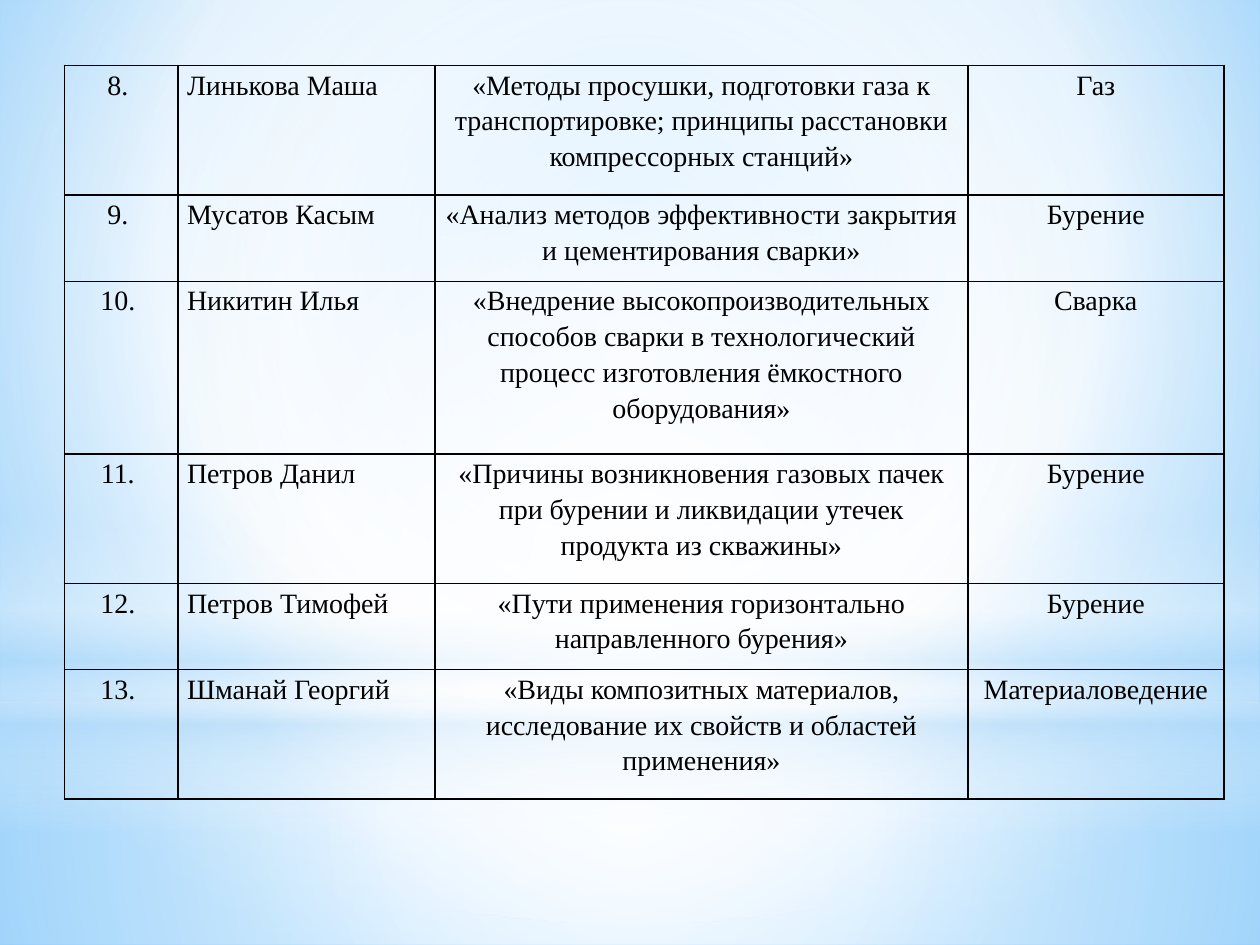
from lxml.etree import SubElement
from pptx import Presentation
from pptx.dml.color import RGBColor
from pptx.enum.shapes import MSO_SHAPE as SHAPE
from pptx.enum.text import PP_ALIGN as ALIGN
from pptx.oxml.ns import qn
from pptx.util import Cm, Pt

COLORS = {"white": "FFFFFF", "ice": "B4DCFA", "sky": "9ED5FF", "blue": "5BB9FF", "black": "000000"}
FONT = "Times New Roman"

FIRST_NUMBER = 8
TOPICS = [
    ("Линькова Маша", "«Методы просушки, подготовки газа к транспортировке; "
     "принципы расстановки компрессорных станций»", "Газ", 3),
    ("Мусатов Касым", "«Анализ методов эффективности закрытия и цементирования сварки»", "Бурение", 2),
    ("Никитин Илья", "«Внедрение высокопроизводительных способов сварки в технологический "
     "процесс изготовления ёмкостного оборудования»", "Сварка", 4),
    ("Петров Данил", "«Причины возникновения газовых пачек при бурении и ликвидации "
     "утечек продукта из скважины»", "Бурение", 3),
    ("Петров Тимофей", "«Пути применения горизонтально направленного бурения»", "Бурение", 2),
    ("Шманай Георгий", "«Виды композитных материалов, исследование их свойств "
     "и областей применения»", "Материаловедение", 3),
]
COLUMNS = [(2.29, ALIGN.CENTER), (5.18, ALIGN.LEFT), (10.74, ALIGN.CENTER), (5.16, ALIGN.CENTER)]
TABLE_LEFT, TABLE_TOP, LINE_HEIGHT = 1.3, 1.32, 0.87

WIDTH, HEIGHT, HORIZON = 25.4, 19.05, 14.17
CENTER = (50, 50, 50, 50)
BACKDROP = [(0, "sky", 100), (60, "white", 100), (100, "blue", 100)]
GLOWS = [
    (SHAPE.RECTANGLE, HORIZON, HEIGHT - HORIZON, CENTER,
     [(0, "white", 91), (37, "white", 76), (100, "ice", 79)]),
    (SHAPE.RECTANGLE, 0, HORIZON, CENTER,
     [(0, "white", 89), (48, "white", 62), (100, "ice", 79)]),
    (SHAPE.RECTANGLE, 10.46, 6.35, None,
     [(0, "white", 0), (29, "white", 30), (45, "ice", 40), (55, "white", 26),
      (65, "ice", 60), (100, "white", 0)]),
    (SHAPE.OVAL, 4.45, HORIZON, CENTER, [(0, "white", 100), (56, "white", 0)]),
]


def set_gradient(fill, element, stops, focus=None):
    """Fill with colour stops, around a focus rectangle or else downwards."""
    fill.gradient()
    grad = element.xpath(".//a:gradFill")[0]
    for child in list(grad):
        grad.remove(child)
    gs_list = SubElement(grad, qn("a:gsLst"))
    for pos, color, alpha in stops:
        gs = SubElement(gs_list, qn("a:gs"), pos=str(pos * 1000))
        clr = SubElement(gs, qn("a:srgbClr"), val=COLORS[color])
        if alpha < 100:
            SubElement(clr, qn("a:alpha"), val=str(alpha * 1000))
    if focus:
        circle = SubElement(grad, qn("a:path"), path="circle")
        sides = {side: str(value * 1000) for side, value in zip("ltrb", focus)}
        SubElement(circle, qn("a:fillToRect"), **sides)
    else:
        SubElement(grad, qn("a:lin"), ang="5400000", scaled="0")


def add_glow(s, kind, top, height, focus, stops):
    """Add one full-width translucent layer."""
    sp = s.shapes.add_shape(kind, 0, Cm(top), Cm(WIDTH), Cm(height))
    sp.shadow.inherit = False
    sp.line.fill.background()
    set_gradient(sp.fill, sp._element, stops, focus)


def write(cell, text, align=ALIGN.LEFT, size=16, color="black", spacing=1.15):
    """Put formatted text into a cell."""
    p = cell.text_frame.paragraphs[0]
    p.alignment = align
    p.line_spacing = spacing
    r = p.add_run()
    r.text = text
    r.font.name = FONT
    r.font.size = Pt(size)
    r.font.color.rgb = RGBColor.from_string(COLORS[color])


def format_cell(cell):
    """Give a cell its margins, thin borders and no fill."""
    cell.margin_left = cell.margin_right = Cm(0.18)
    cell.margin_top = cell.margin_bottom = 0
    tc_pr = cell._tc.get_or_add_tcPr()
    for side in "LRTB":
        ln = SubElement(tc_pr, qn(f"a:ln{side}"), w=str(Pt(1)))
        SubElement(SubElement(ln, qn("a:solidFill")), qn("a:srgbClr"), val=COLORS["black"])
    cell.fill.background()


def add_topics(s):
    """Add the table, with row heights following the number of text lines."""
    width = sum(w for w, _ in COLUMNS)
    height = LINE_HEIGHT * sum(topic[-1] for topic in TOPICS)
    table = s.shapes.add_table(len(TOPICS), len(COLUMNS), Cm(TABLE_LEFT), Cm(TABLE_TOP),
                               Cm(width), Cm(height)).table
    table.first_row = table.horz_banding = False
    for column, (w, _) in zip(table.columns, COLUMNS):
        column.width = Cm(w)
    for i, (*texts, lines) in enumerate(TOPICS):
        table.rows[i].height = Cm(LINE_HEIGHT * lines)
        for j, text in enumerate([f"{FIRST_NUMBER + i}. ", *texts]):
            cell = table.cell(i, j)
            format_cell(cell)
            write(cell, text, align=COLUMNS[j][1])


def main():
    """Build the slide and save it."""
    prs = Presentation()
    prs.slide_width, prs.slide_height = Cm(WIDTH), Cm(HEIGHT)
    s = prs.slides.add_slide(prs.slide_layouts[6])
    set_gradient(s.background.fill, s._element, BACKDROP, (20, 10, 20, 60))
    for glow in GLOWS:
        add_glow(s, *glow)
    add_topics(s)
    prs.save("out.pptx")


if __name__ == "__main__":
    main()
